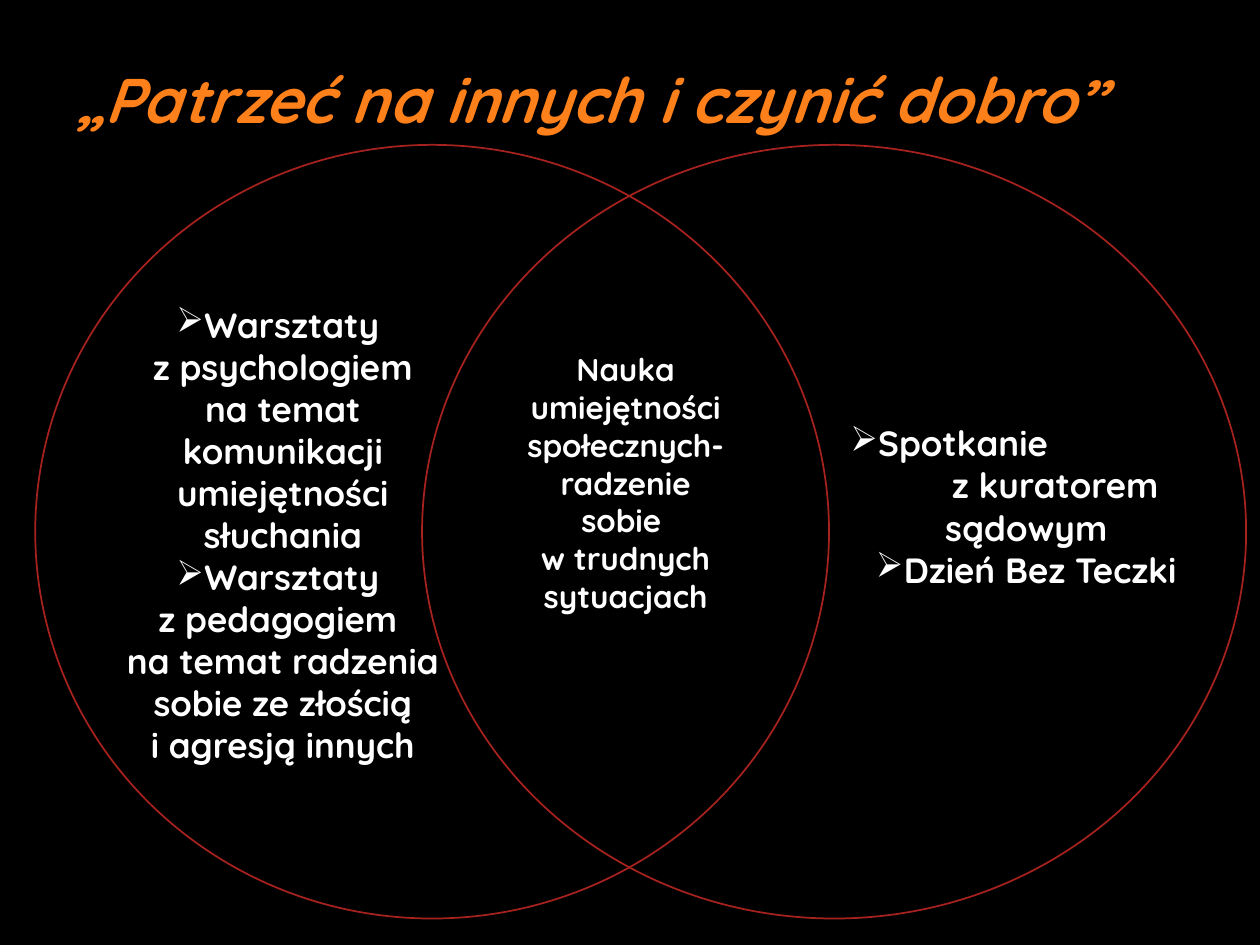
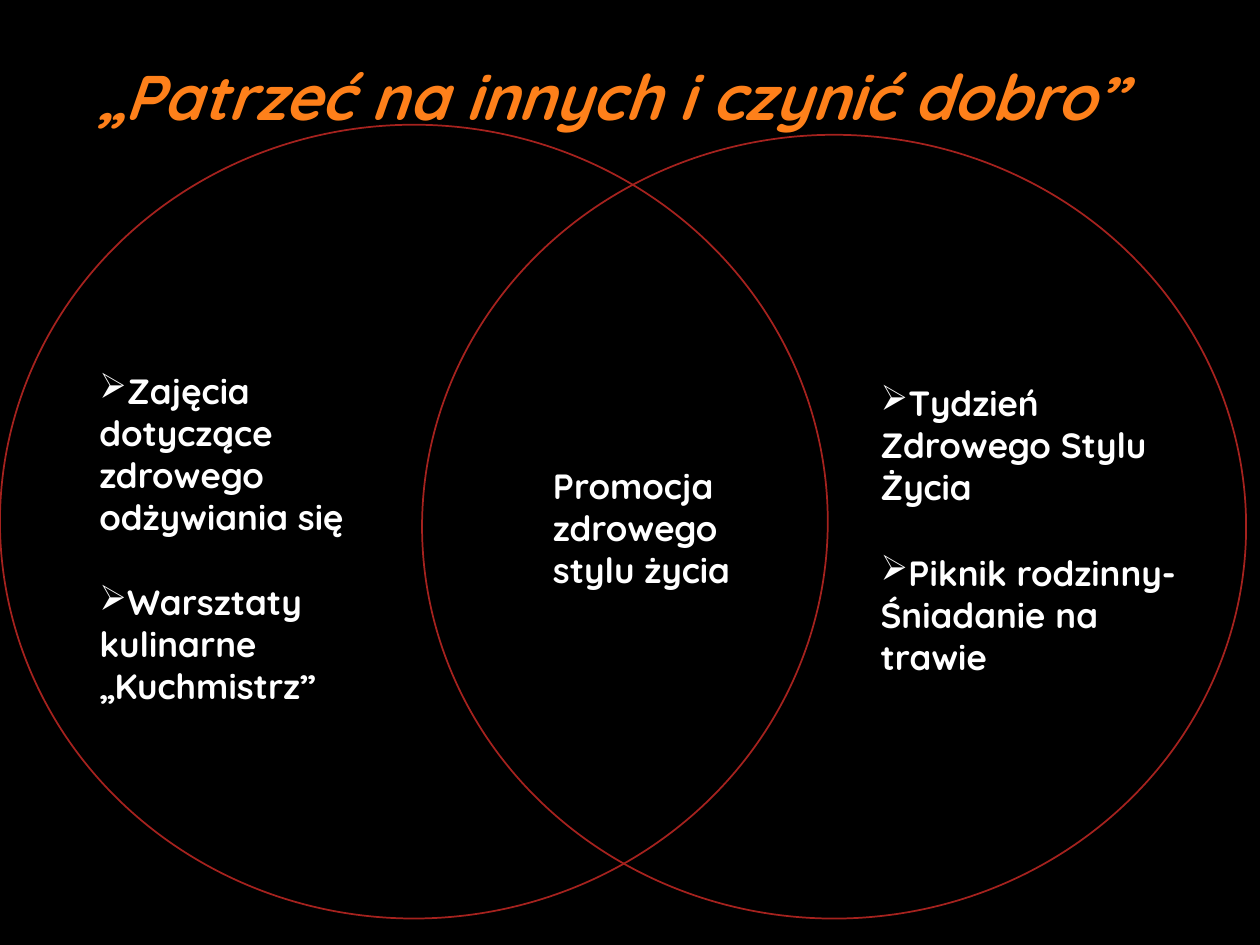
from lxml.etree import SubElement
from pptx import Presentation
from pptx.dml.color import RGBColor
from pptx.enum.shapes import MSO_SHAPE
from pptx.enum.text import MSO_ANCHOR, MSO_AUTO_SIZE, PP_ALIGN
from pptx.oxml.ns import qn
from pptx.util import Inches, Pt

BLACK = RGBColor(0x00, 0x00, 0x00)
WHITE = RGBColor(0xFF, 0xFF, 0xFF)
ORANGE = RGBColor(0xFE, 0x80, 0x1A)
RED = RGBColor(0xA5, 0x22, 0x1E)
FONT = "Quicksand"
TITLE_ONLY = 5
BULLET = "➢"

TITLE = "„Patrzeć na innych i czynić dobro”"
LEFT, CENTER = PP_ALIGN.LEFT, PP_ALIGN.CENTER

# Boxes are left, top, width, height in inches.
# A paragraph is its text and a dict of what differs from the plain style;
# "indent" is in inches and "gap" (space before) in points.
ITEM = {"bullet": True}
SPACED_ITEM = {"bullet": True, "gap": 25}

SLIDES = [
    {
        "title_box": (0.51, 0.43, 8.9, 0.71),
        "circles": [(3.35, 1.15, 6.54, 6.14), (0.28, 1.15, 6.3, 6.14)],
        "align": CENTER,
        "texts": [
            {"box": (4.02, 2.73, 1.89, 2.26), "size": 18, "paragraphs": [
                ("Nauka umiejętności społecznych- radzenie sobie ", {}),
                ("w trudnych sytuacjach", {}),
            ]},
            {"box": (0.83, 2.36, 2.83, 4.11), "size": 20, "paragraphs": [
                ("Warsztaty ", ITEM),
                ("z psychologiem", {}),
                ("na temat komunikacji umiejętności słuchania", {}),
                ("Warsztaty ", ITEM),
                ("z pedagogiem ", {}),
                ("na temat radzenia sobie ze złością", {}),
                ("i agresją innych", {}),
            ]},
            {"box": (6.61, 3.3, 3.15, 1.43), "size": 20, "paragraphs": [
                ("Spotkanie", {"bullet": True, "align": LEFT, "indent": 0.04}),
                ("z kuratorem", {"indent": 0.38}),
                ("sądowym ", {}),
                ("Dzień Bez Teczki ", ITEM),
            ]},
        ],
    },
    {
        "title_box": (0.67, 0.41, 8.74, 0.71),
        "circles": [(3.35, 1.07, 6.54, 6.22), (0, 0.99, 6.57, 6.3)],
        "align": LEFT,
        "texts": [
            {"box": (4.29, 3.64, 1.89, 1.11), "size": 20, "paragraphs": [
                ("Promocja zdrowego stylu życia", {}),
            ]},
            {"box": (0.69, 2.88, 2.6, 3.13), "size": 20, "paragraphs": [
                ("Zajęcia dotyczące zdrowego odżywiania się", ITEM),
                ("Warsztaty kulinarne „Kuchmistrz”", SPACED_ITEM),
            ]},
            {"box": (6.89, 2.98, 2.68, 2.46), "size": 20, "paragraphs": [
                ("Tydzień Zdrowego Stylu Życia", ITEM),
                ("Piknik rodzinny- Śniadanie na trawie", SPACED_ITEM),
            ]},
        ],
    },
]


def set_all(target, values):
    for name, value in values.items():
        setattr(target, name, value)


def inches(box):
    return [Inches(length) for length in box]


def style_font(font, size, color, italic=False):
    set_all(font, {"name": FONT, "size": Pt(size), "bold": True, "italic": italic})
    font.color.rgb = color


def add_title(slide, box):
    title = slide.shapes.title
    set_all(title, dict(zip(("left", "top", "width", "height"), inches(box))))
    frame = title.text_frame
    frame.text = TITLE
    set_all(frame, {"word_wrap": True, "vertical_anchor": MSO_ANCHOR.TOP,
                    "auto_size": MSO_AUTO_SIZE.NONE})
    frame.paragraphs[0].alignment = LEFT
    style_font(frame.paragraphs[0].runs[0].font, 36, ORANGE, italic=True)


def add_circle(slide, box):
    circle = slide.shapes.add_shape(MSO_SHAPE.FLOWCHART_CONNECTOR, *inches(box))
    circle.shadow.inherit = False
    circle.fill.background()
    circle.line.color.rgb = RED
    circle.line.width = Pt(1)


def format_paragraph(paragraph, align, bullet=False, indent=0, gap=0):
    paragraph.alignment = align
    if gap:
        paragraph.space_before = Pt(gap)
    properties = paragraph._p.get_or_add_pPr()
    properties.set("marL", str(Inches(indent)))
    properties.set("indent", "0")
    if bullet:
        SubElement(properties, qn("a:buChar"), char=BULLET)


def add_text(slide, box, size, paragraphs, align):
    frame = slide.shapes.add_textbox(*inches(box)).text_frame
    set_all(frame, {"word_wrap": True, "auto_size": MSO_AUTO_SIZE.SHAPE_TO_FIT_TEXT})
    for index, (wording, changes) in enumerate(paragraphs):
        paragraph = frame.add_paragraph() if index else frame.paragraphs[0]
        format_paragraph(paragraph, **{"align": align, **changes})
        run = paragraph.add_run()
        run.text = wording
        style_font(run.font, size, WHITE)


def main():
    prs = Presentation()
    prs.slide_width, prs.slide_height = Inches(10), Inches(7.5)
    background = prs.slide_master.background.fill
    background.solid()
    background.fore_color.rgb = BLACK
    for content in SLIDES:
        slide = prs.slides.add_slide(prs.slide_layouts[TITLE_ONLY])
        add_title(slide, content["title_box"])
        for circle_box in content["circles"]:
            add_circle(slide, circle_box)
        for text in content["texts"]:
            add_text(slide, align=content["align"], **text)
    prs.save("out.pptx")


if __name__ == "__main__":
    main()
